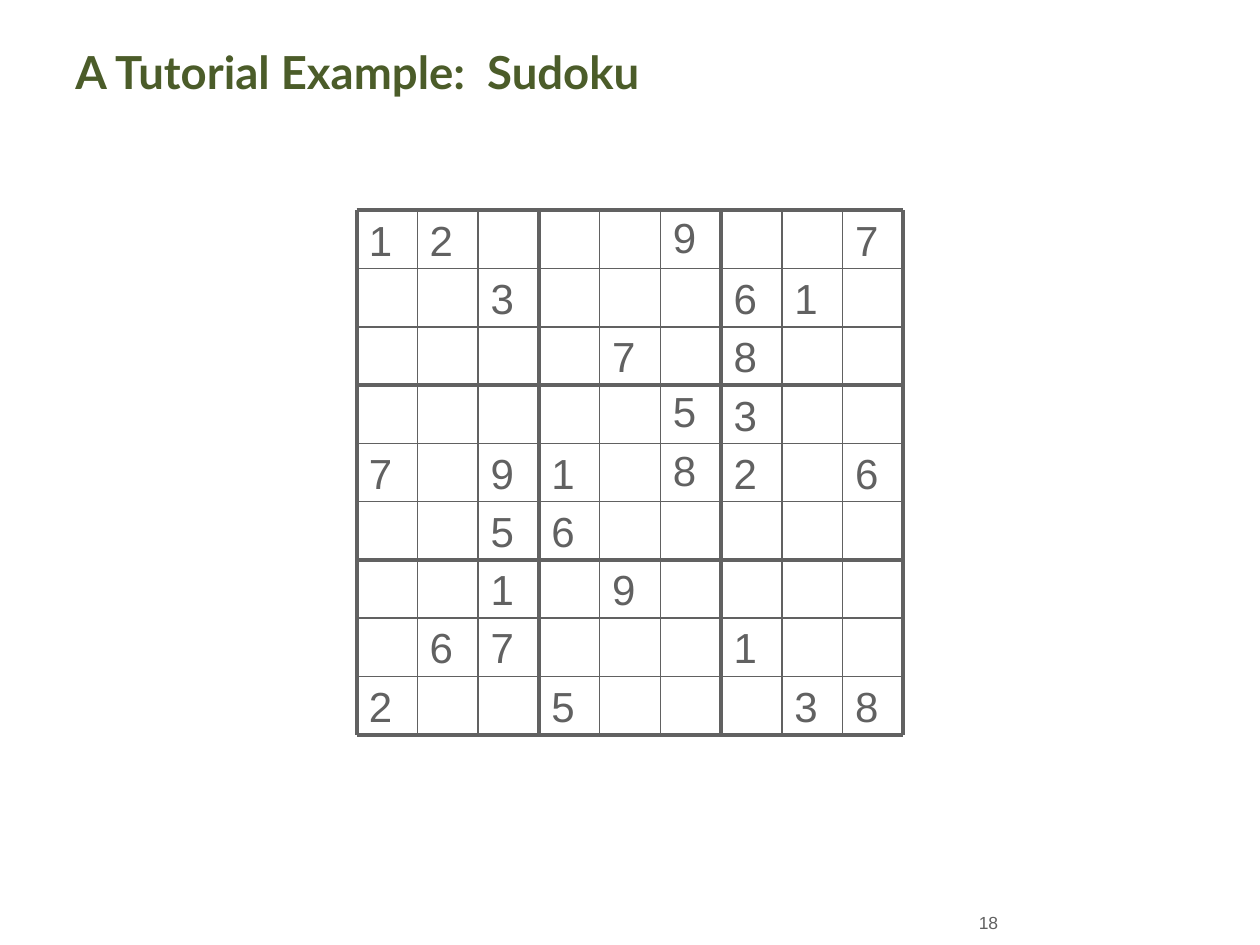
from pptx import Presentation
from pptx.dml.color import RGBColor
from pptx.enum.shapes import MSO_CONNECTOR as Connector, MSO_SHAPE as Shape
from pptx.enum.text import MSO_ANCHOR as Anchor, PP_ALIGN as Align
from pptx.util import Inches, Pt
from lxml.etree import SubElement
from pptx.oxml.ns import qn

GRAY, GREEN = "616161", "4B5C29"

# One string per row; a dot is an empty cell
PUZZLE = [
    "12...9..7",
    "..3...61.",
    "....7.8..",
    ".....53..",
    "7.91.82.6",
    "..56.....",
    "..1.9....",
    ".67...1..",
    "2..5...38",
]
LEFT, TOP = 2.83, 1.67
WIDTH, HEIGHT = 4.34, 4.16
SIZE, BOX = 9, 3
CELL_WIDTH, CELL_HEIGHT = WIDTH / SIZE, HEIGHT / SIZE
TIGHT_COLUMN = 5  # digits here have tighter line spacing


def color(value):
    return RGBColor.from_string(value)


class SlideBuilder:
    def __init__(self, slide):
        self.slide = slide
        self.grid = slide.shapes.add_group_shape()

    def fill_text(self, shape, text, size, font="Arial", ink=GRAY, bold=False):
        paragraph = shape.text_frame.paragraphs[0]
        paragraph.text = text
        paragraph.alignment = Align.LEFT
        paragraph.font.name = font
        paragraph.font.size = Pt(size)
        paragraph.font.bold = bold
        paragraph.font.color.rgb = color(ink)
        return paragraph

    def text_box(self, left, top, width, height, text, size, **style):
        shape = self.slide.shapes.add_textbox(
            Inches(left), Inches(top), Inches(width), Inches(height))
        shape.text_frame.word_wrap = True
        self.fill_text(shape, text, size, **style)

    def cell(self, row, column, digit):
        shape = self.grid.shapes.add_shape(
            Shape.RECTANGLE,
            Inches(LEFT + column * CELL_WIDTH), Inches(TOP + row * CELL_HEIGHT),
            Inches(CELL_WIDTH), Inches(CELL_HEIGHT))
        shape.shadow.inherit = False
        shape.fill.background()
        shape.line.color.rgb = color(GRAY)
        shape.line.width = Pt(0.75)
        if digit != ".":
            shape.text_frame.word_wrap = False
            shape.text_frame.vertical_anchor = Anchor.MIDDLE
            paragraph = self.fill_text(shape, digit, 24)
            if column == TIGHT_COLUMN:
                paragraph.line_spacing = 0.9

    def line(self, x1, y1, x2, y2):
        connector = self.grid.shapes.add_connector(
            Connector.STRAIGHT, Inches(x1), Inches(y1), Inches(x2), Inches(y2))
        connector.line.color.rgb = color(GRAY)
        connector.line.width = Pt(2.25)
        SubElement(connector.element.spPr, qn("a:effectLst"))


def main():
    presentation = Presentation()
    presentation.slide_width = Inches(10)
    presentation.slide_height = Inches(7.5)
    slide = presentation.slides.add_slide(presentation.slide_layouts[6])
    builder = SlideBuilder(slide)

    # Title and page number
    builder.text_box(0.5, 0.3, 9, 1.25, "A Tutorial Example:  Sudoku", 26,
                     font="Lato", ink=GREEN, bold=True)
    builder.text_box(7.67, 7.19, 1.5, 0.23, "18", 10)

    # Cells
    for row, digits in enumerate(PUZZLE):
        for column, digit in enumerate(digits):
            builder.cell(row, column, digit)

    # Thick lines around the 3 by 3 boxes
    for step in range(0, SIZE + 1, BOX):
        x, y = LEFT + step * CELL_WIDTH, TOP + step * CELL_HEIGHT
        builder.line(LEFT, y, LEFT + WIDTH, y)
        builder.line(x, TOP, x, TOP + HEIGHT)

    presentation.save("out.pptx")


if __name__ == "__main__":
    main()
